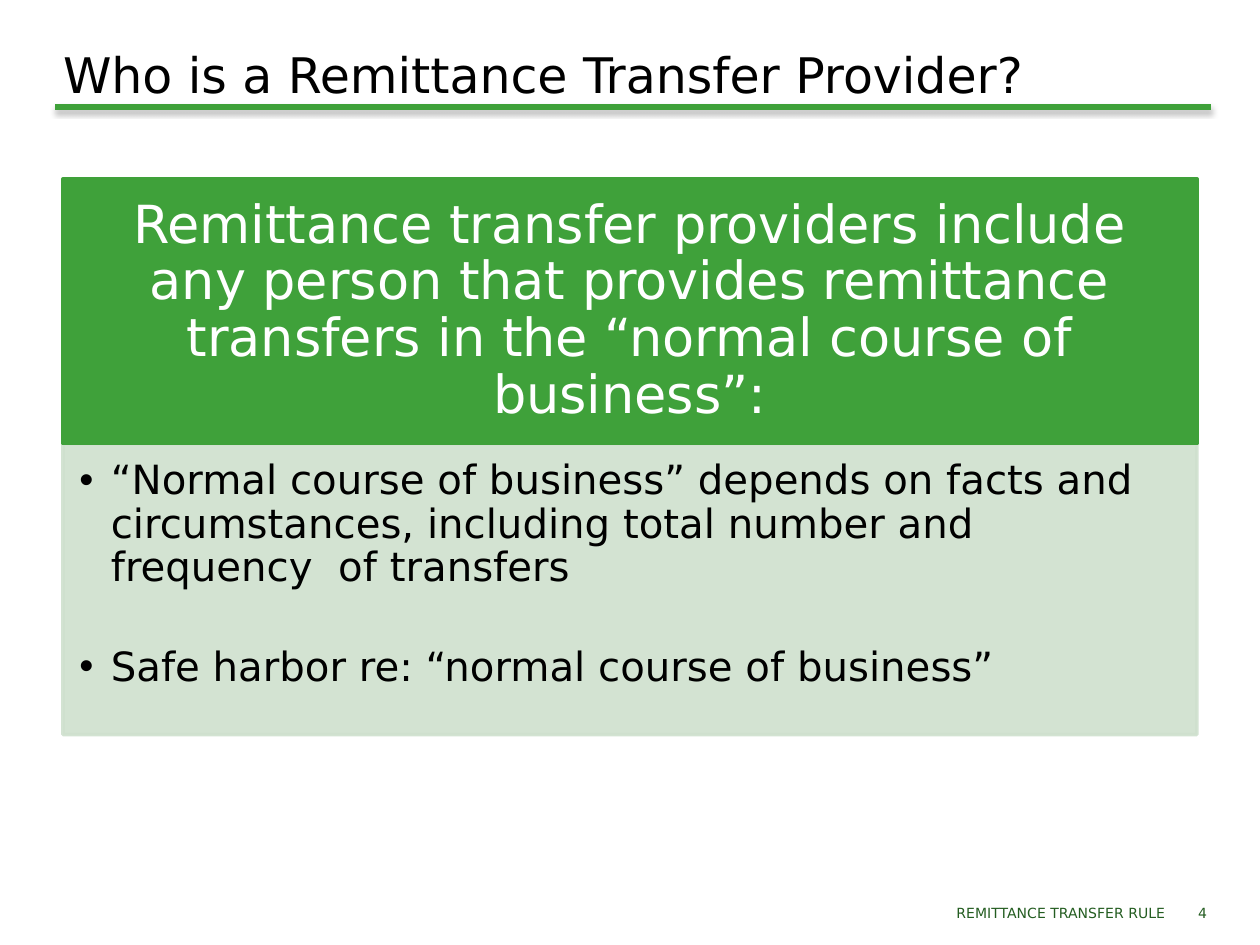
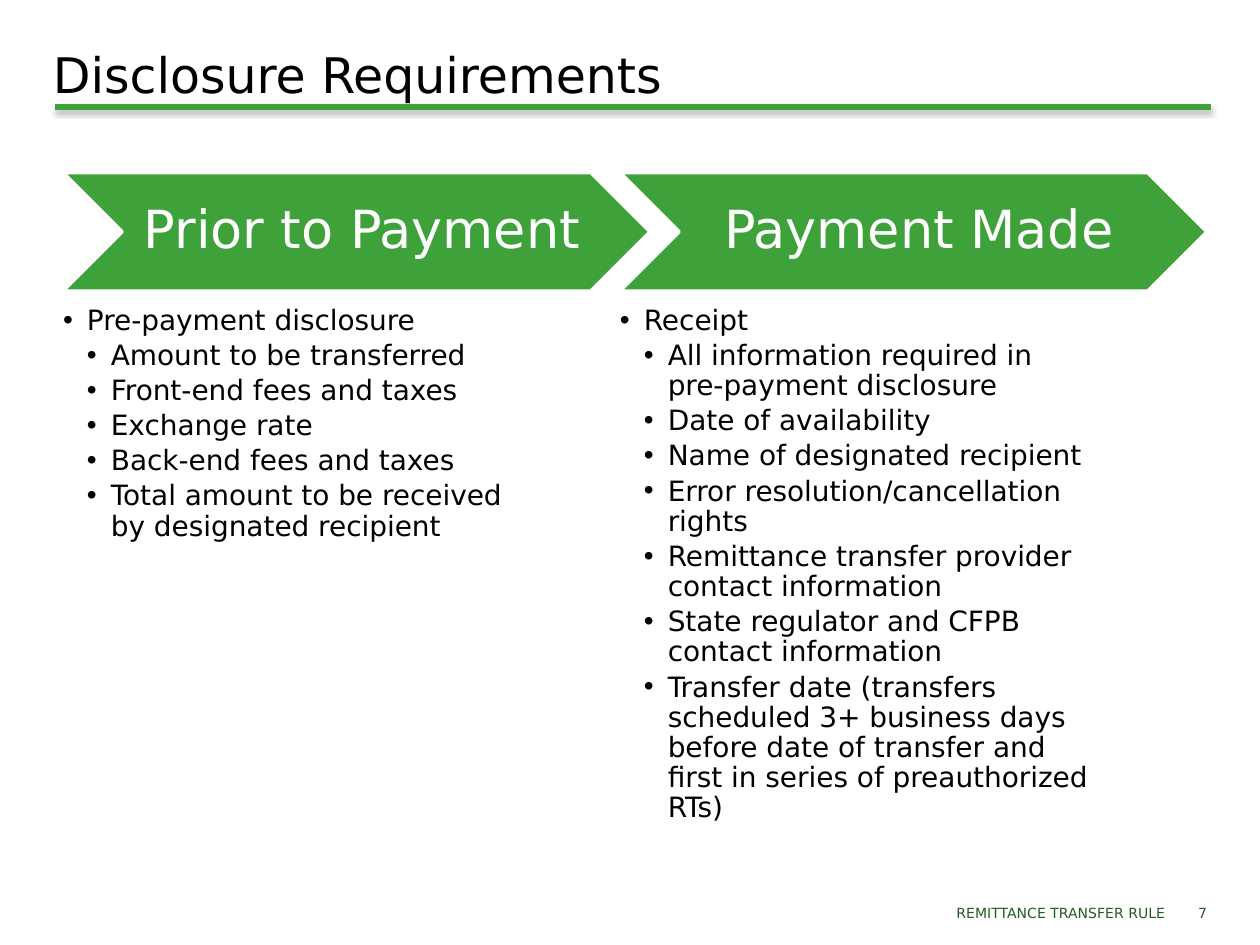
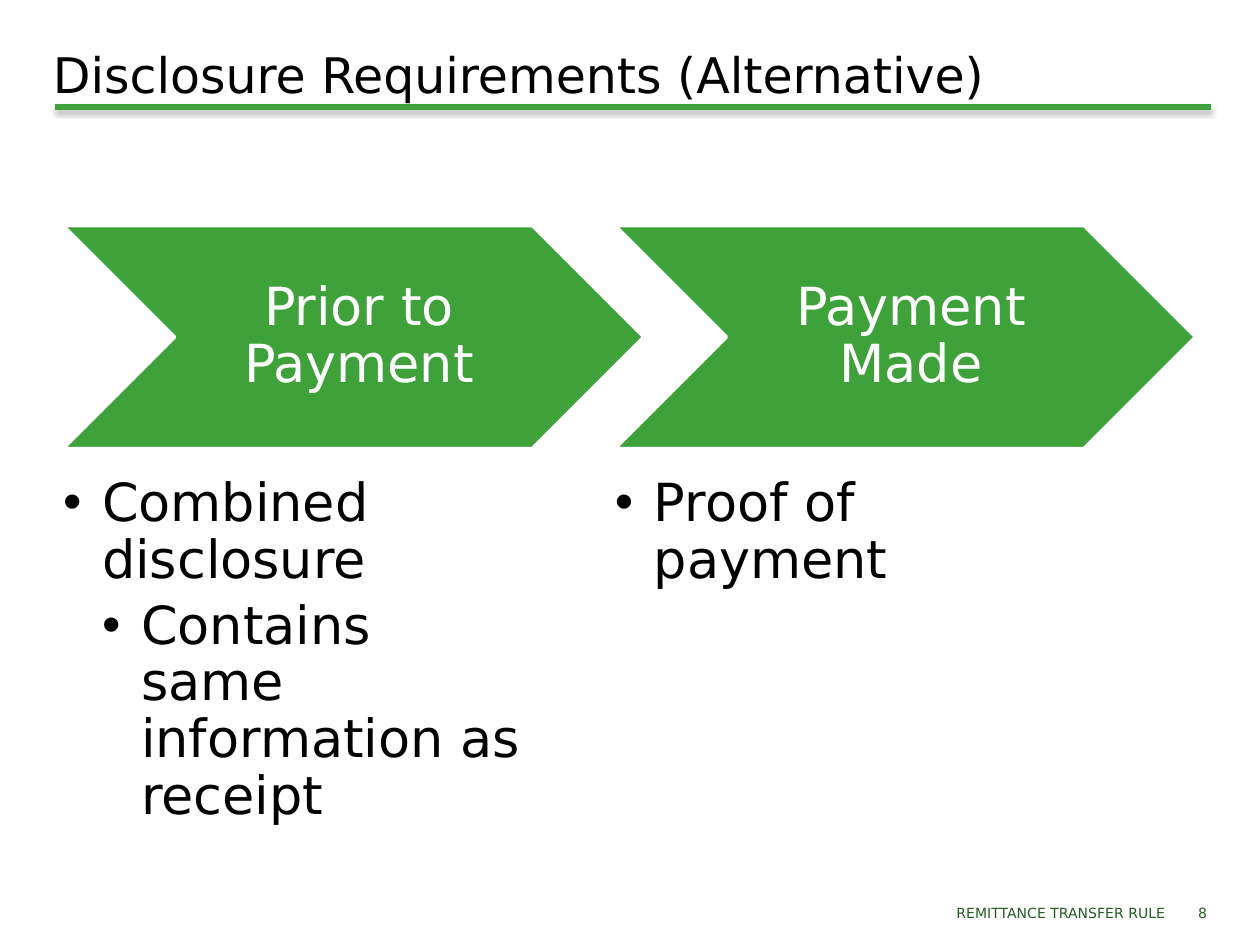
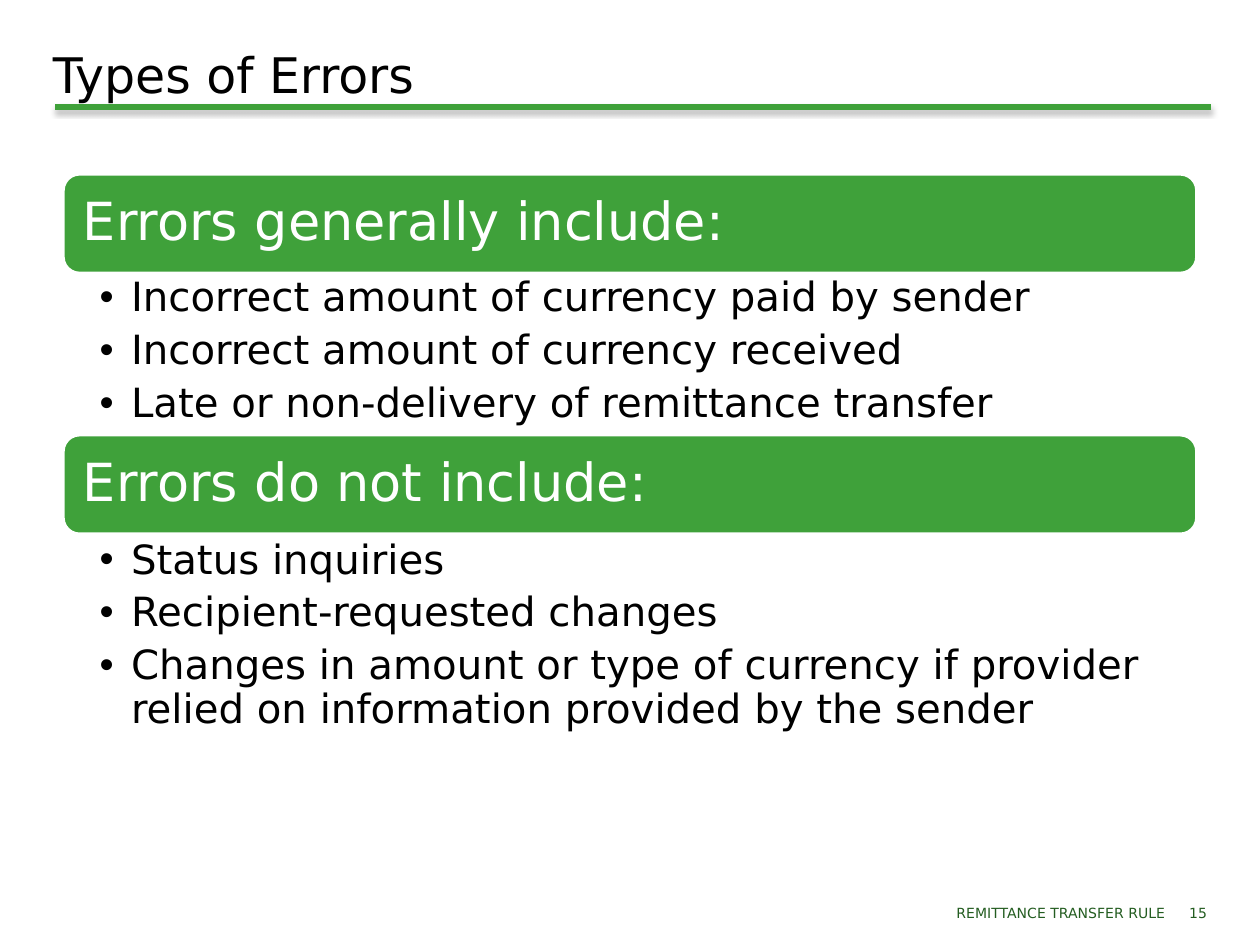
"""Build four slides on the remittance transfer rule."""
from dataclasses import dataclass

from lxml.etree import SubElement
from pptx import Presentation
from pptx.dml.color import RGBColor
from pptx.enum.shapes import MSO_CONNECTOR, MSO_SHAPE
from pptx.enum.text import MSO_ANCHOR, MSO_AUTO_SIZE, PP_ALIGN
from pptx.oxml.ns import qn
from pptx.util import Inches, Pt


@dataclass(frozen=True)
class Theme:
    font: str = "DejaVu Sans"
    green: str = "3FA13A"
    dark_green: str = "245D21"
    pale_green: str = "CFE0CE"
    white: str = "FFFFFF"
    black: str = "000000"
    title_size: int = 28
    heading_size: int = 30
    footer_size: int = 8


theme = Theme()


def place(shape, box):
    """Move a shape to left, top, width and height in inches."""
    for side, value in zip(("left", "top", "width", "height"), box):
        setattr(shape, side, Inches(value))


def write(frame, lines, size, color, margins, anchor=MSO_ANCHOR.TOP,
          alignment=PP_ALIGN.LEFT, spacing=1.0, gap=0, indent=0):
    """Fill a text frame with (level, text) lines, bulleted when indented."""
    frame_format = {"word_wrap": True, "auto_size": MSO_AUTO_SIZE.NONE, "vertical_anchor": anchor}
    for side, value in zip(("left", "top", "right", "bottom"), margins):
        frame_format[f"margin_{side}"] = Inches(value)
    for name, value in frame_format.items():
        setattr(frame, name, value)
    for index, (level, text) in enumerate(lines):
        paragraph = frame.add_paragraph() if index else frame.paragraphs[0]
        if indent:
            properties = paragraph._p.get_or_add_pPr()
            properties.set("marL", str(Inches(indent * (level + 1))))
            properties.set("indent", str(-Inches(indent)))
            SubElement(properties, qn("a:buChar"), char="•")
        paragraph_format = {"level": level, "alignment": alignment, "line_spacing": spacing,
                            "space_before": Pt(0), "space_after": Pt(gap)}
        for name, value in paragraph_format.items():
            setattr(paragraph, name, value)
        run = paragraph.add_run()
        run.text = text
        for name, value in {"name": theme.font, "size": Pt(size)}.items():
            setattr(run.font, name, value)
        run.font.color.rgb = RGBColor.from_string(color)


banner = {"shape": MSO_SHAPE.RECTANGLE, "line": theme.green,
          "margins": (0.23, 0.13, 0.23, 0.13), "alignment": PP_ALIGN.CENTER}
chevron = {"shape": MSO_SHAPE.CHEVRON, "line": theme.white,
           "margins": (0.13, 0.04, 0.04, 0.04), "alignment": PP_ALIGN.CENTER}
bar = {"shape": MSO_SHAPE.ROUNDED_RECTANGLE, "line": theme.white,
       "margins": (0.12, 0.12, 0.12, 0.12), "alignment": PP_ALIGN.LEFT}

panel_list = {"size": 23, "indent": 0.25, "gap": 32, "margins": (0.13, 0.13, 0.18, 0.2)}
detail_list = {"size": 16, "indent": 0.19, "gap": 2.8, "margins": (0, 0, 0, 0)}
large_list = {"size": 30, "indent": 0.31, "gap": 5.2, "margins": (0, 0, 0, 0)}
error_list = {"size": 23, "indent": 0.25, "gap": 5.35, "margins": (0.29, 0.04, 0.23, 0.04)}

wide_title = (0.42, 0.3, 9.17, 0.5)
pages = [
    {"number": 4, "title": "Who is a Remittance Transfer Provider?",
     "title_box": (0.5, 0.3, 9.08, 1.25), "heading": banner, "list": panel_list,
     "panel": True, "sections": [
         ("Remittance transfer providers include any person that provides remittance "
          "transfers in the “normal course of business”:",
          (0.5, 1.42, 9, 2.1), (0.5, 3.52, 9, 2.31),
          [(0, "“Normal course of business” depends on facts and circumstances, "
               "including total number and frequency  of transfers"),
           (0, "Safe harbor re: “normal course of business”")])]},
    {"number": 7, "title": "Disclosure Requirements",
     "title_box": wide_title, "heading": chevron, "list": detail_list,
     "panel": False, "sections": [
         ("Prior to Payment", (0.5, 1.37, 4.66, 0.94), (0.5, 2.43, 3.73, 4.2),
          [(0, "Pre-payment disclosure"),
           (1, "Amount to be transferred"),
           (1, "Front-end fees and taxes"),
           (1, "Exchange rate"),
           (1, "Back-end fees and taxes"),
           (1, "Total amount to be received by designated recipient")]),
         ("Payment Made", (4.92, 1.37, 4.66, 0.94), (4.92, 2.43, 3.73, 4.2),
          [(0, "Receipt"),
           (1, "All information required in pre-payment disclosure"),
           (1, "Date of availability"),
           (1, "Name of designated recipient"),
           (1, "Error resolution/cancellation rights"),
           (1, "Remittance transfer provider contact information"),
           (1, "State regulator and CFPB contact information"),
           (1, "Transfer date (transfers scheduled 3+ business days before date of "
               "transfer and first in series of preauthorized RTs)")])]},
    {"number": 8, "title": "Disclosure Requirements (Alternative)",
     "title_box": wide_title, "heading": chevron, "list": large_list,
     "panel": False, "sections": [
         ("Prior to Payment", (0.5, 1.79, 4.61, 1.77), (0.5, 3.78, 3.69, 2.88),
          [(0, "Combined disclosure"),
           (1, "Contains same information as receipt")]),
         ("Payment Made", (4.88, 1.79, 4.61, 1.77), (4.88, 3.78, 3.69, 2.88),
          [(0, "Proof of payment")])]},
    {"number": 15, "title": "Types of Errors",
     "title_box": wide_title, "heading": bar, "list": error_list,
     "panel": False, "sections": [
         ("Errors generally include:", (0.5, 1.38, 9, 0.79), (0.5, 2.16, 9, 1.29),
          [(0, "Incorrect amount of currency paid by sender"),
           (0, "Incorrect amount of currency received"),
           (0, "Late or non-delivery of remittance transfer")]),
         ("Errors do not include:", (0.5, 3.45, 9, 0.79), (0.5, 4.24, 9, 1.66),
          [(0, "Status inquiries"),
           (0, "Recipient-requested changes"),
           (0, "Changes in amount or type of currency if provider relied on "
               "information provided by the sender")])]},
]

presentation = Presentation()
presentation.slide_width = Inches(10)
presentation.slide_height = Inches(7.5)
one_list_layout = presentation.slide_layouts[1]
two_list_layout = presentation.slide_layouts[3]

for page in pages:
    layout = one_list_layout if len(page["sections"]) == 1 else two_list_layout
    slide = presentation.slides.add_slide(layout)
    title, *bodies = slide.placeholders
    place(title, page["title_box"])
    write(title.text_frame, [(0, page["title"])], theme.title_size, theme.black,
          (0, 0.05, 0, 0.05))

    style = page["heading"]
    for body, (text, heading_box, list_box, items) in zip(bodies, page["sections"]):
        heading = slide.shapes.add_shape(style["shape"], *map(Inches, heading_box))
        heading.shadow.inherit = False
        heading.fill.solid()
        heading.fill.fore_color.rgb = RGBColor.from_string(theme.green)
        heading.line.color.rgb = RGBColor.from_string(style["line"])
        heading.line.width = Pt(2)
        write(heading.text_frame, [(0, text)], theme.heading_size, theme.white,
              style["margins"], MSO_ANCHOR.MIDDLE, style["alignment"], spacing=0.9)

        place(body, list_box)
        write(body.text_frame, items, color=theme.black, spacing=0.9, **page["list"])
        if page["panel"]:
            body.fill.solid()
            body.fill.fore_color.rgb = RGBColor.from_string(theme.pale_green)
            body.line.color.rgb = RGBColor.from_string(theme.pale_green)
            body.line.width = Pt(2)
            for color in body._element.spPr.iter(qn("a:srgbClr")):
                SubElement(color, qn("a:alpha"), val="90000")

    for text, footer_box in ((str(page["number"]), (9.28, 6.95, 0.3, 0.4)),
                             ("REMITTANCE TRANSFER RULE", (6.42, 6.95, 2.83, 0.4))):
        footer = slide.shapes.add_textbox(*map(Inches, footer_box))
        write(footer.text_frame, [(0, text)], theme.footer_size, theme.dark_green,
              (0, 0.04, 0, 0.04), MSO_ANCHOR.BOTTOM, PP_ALIGN.RIGHT)

title_rule = slide.shapes.add_connector(
    MSO_CONNECTOR.STRAIGHT, Inches(0.44), Inches(0.85), Inches(9.61), Inches(0.85))
title_rule.line.color.rgb = RGBColor.from_string(theme.green)
title_rule.line.width = Pt(3)
effects = SubElement(title_rule._element.spPr, qn("a:effectLst"))
shadow = SubElement(effects, qn("a:outerShdw"), blurRad=str(Pt(3.1)), dist=str(Pt(1.8)),
                    dir="5400000", rotWithShape="0")
shadow_color = SubElement(shadow, qn("a:srgbClr"), val=theme.black)
SubElement(shadow_color, qn("a:alpha"), val="35000")
presentation.slide_master.shapes._spTree.append(title_rule._element)

presentation.save("out.pptx")
